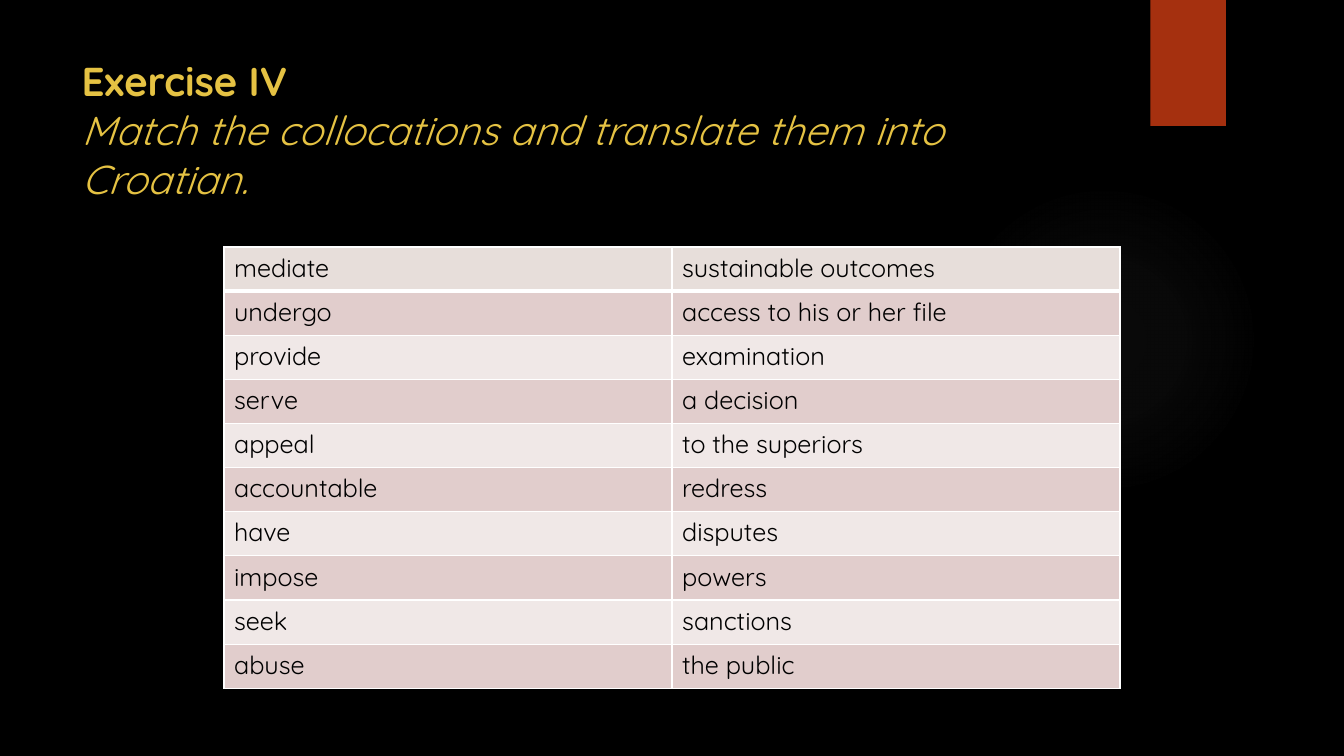
import pptx
import pptx.dml.color
import pptx.enum.shapes
import pptx.enum.text
import pptx.oxml
import pptx.oxml.ns
import pptx.util

WIDTH, HEIGHT = 13.33, 7.5
COLLOCATIONS = [
    ("mediate", "sustainable outcomes"),
    ("undergo", "access to his or her file"),
    ("provide", "examination"),
    ("serve", "a decision"),
    ("appeal", "to the superiors"),
    ("accountable", "redress"),
    ("have", "disputes"),
    ("impose", "powers"),
    ("seek", "sanctions"),
    ("abuse", "the public"),
]


def color(value):
    return pptx.dml.color.RGBColor.from_string(value)


class ExerciseSlide:
    """Style and current slide; lengths are shares of the slide's size."""

    font_name = "Quicksand"
    title_color = "E5C243"
    header_fill = "E7DEDA"
    band_fills = ("F0E8E7", "E1CDCC")
    border_color = "FFFFFF"

    def __init__(self, presentation):
        self.width = presentation.slide_width
        self.height = presentation.slide_height
        self.slide = presentation.slides.add_slide(presentation.slide_layouts[5])
        self.slide.background.fill.solid()
        self.slide.background.fill.fore_color.rgb = color("000000")

    def box(self, left, top, width, height):
        return (round(left * self.width), round(top * self.height),
                round(width * self.width), round(height * self.height))

    def shape(self, kind, fill, *share):
        shape = self.slide.shapes.add_shape(kind, *self.box(*share))
        shape.shadow.inherit = False
        shape.line.fill.background()
        shape.fill.solid()
        shape.fill.fore_color.rgb = color(fill)
        return shape

    def glow(self, fill, stops, *share):
        shape = self.shape(pptx.enum.shapes.MSO_SHAPE.OVAL, fill, *share)
        solid = shape.element.spPr.find(pptx.oxml.ns.qn("a:solidFill"))
        stop_xml = "".join(
            f'<a:gs pos="{position * 1000}"><a:srgbClr val="{fill}">'
            f'<a:alpha val="{alpha * 1000}"/></a:srgbClr></a:gs>'
            for position, alpha in stops)
        gradient = pptx.oxml.parse_xml(
            f'<a:gradFill {pptx.oxml.ns.nsdecls("a")}><a:gsLst>{stop_xml}</a:gsLst>'
            '<a:path path="circle"><a:fillToRect l="50000" t="50000" '
            'r="50000" b="50000"/></a:path></a:gradFill>')
        solid.getparent().replace(solid, gradient)

    def title(self, heading, instruction, *share):
        title = self.slide.shapes.title
        title.left, title.top, title.width, title.height = self.box(*share)
        frame = title.text_frame
        frame.word_wrap = True
        frame.auto_size = pptx.enum.text.MSO_AUTO_SIZE.NONE
        frame.vertical_anchor = pptx.enum.text.MSO_ANCHOR.TOP
        paragraph = frame.paragraphs[0]
        paragraph.alignment = pptx.enum.text.PP_ALIGN.LEFT
        paragraph.line_spacing = pptx.util.Pt(35)
        self.style(paragraph.font, 28.8, self.title_color)
        heading_run = paragraph.add_run()
        heading_run.text = heading
        heading_run.font.bold = True
        paragraph.add_line_break()
        instruction_run = paragraph.add_run()
        instruction_run.text = instruction
        instruction_run.font.italic = True

    def style(self, font, size, font_color):
        font.name = self.font_name
        font.size = pptx.util.Pt(size)
        font.color.rgb = color(font_color)

    def borders(self, cell, **widths):
        properties = cell._tc.get_or_add_tcPr()
        for side in "LRTB":
            properties.append(pptx.oxml.parse_xml(
                f'<a:ln{side} {pptx.oxml.ns.nsdecls("a")} '
                f'w="{pptx.util.Pt(widths.get(side, 1))}"><a:solidFill>'
                f'<a:srgbClr val="{self.border_color}"/></a:solidFill></a:ln{side}>'))

    def table(self, rows, *share):
        table = self.slide.shapes.add_table(
            len(rows), len(rows[0]), *self.box(*share)).table
        for row_index, row in enumerate(rows):
            fill = self.band_fills[row_index % 2] if row_index else self.header_fill
            # A thick rule separates the first row from the second
            widths = {0: {"B": 3}, 1: {"T": 3}}.get(row_index, {})
            for column_index, text in enumerate(row):
                cell = table.cell(row_index, column_index)
                self.borders(cell, **widths)
                cell.fill.solid()
                cell.fill.fore_color.rgb = color(fill)
                cell.text = text
                font = cell.text_frame.paragraphs[0].font
                self.style(font, 18, "000000")
                font.bold = False


def main():
    presentation = pptx.Presentation()
    presentation.slide_width = pptx.util.Inches(WIDTH)
    presentation.slide_height = pptx.util.Inches(HEIGHT)
    exercise = ExerciseSlide(presentation)

    # Backdrop: faint glow and bookmark tab
    exercise.glow("848484", [(0, 7), (36, 6), (69, 0)],
                  9.41 / WIDTH, 1.83 / HEIGHT, 3.08 / WIDTH, 3.08 / HEIGHT)
    exercise.shape(pptx.enum.shapes.MSO_SHAPE.RECTANGLE, "A5300F",
                   11.41 / WIDTH, 0, 0.75 / WIDTH, 1 / 6)

    # Heading and instruction
    exercise.title("Exercise IV",
                   "Match the collocations and translate them into Croatian.",
                   0.71 / WIDTH, 0.5 / HEIGHT, 10.29 / WIDTH, 1.53 / HEIGHT)

    # Words to match
    exercise.table(COLLOCATIONS, 1 / 6, 2.45 / HEIGHT, 2 / 3, 4.38 / HEIGHT)

    presentation.save("out.pptx")


if __name__ == "__main__":
    main()
